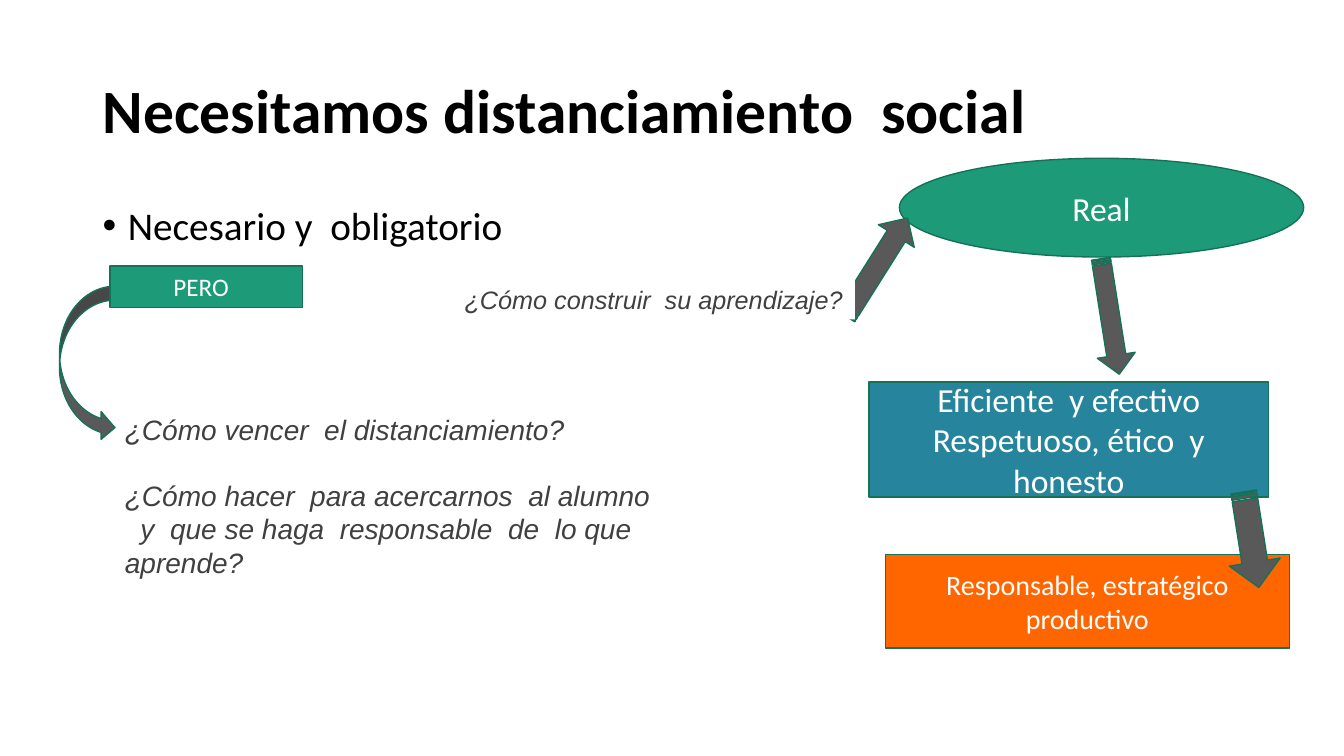
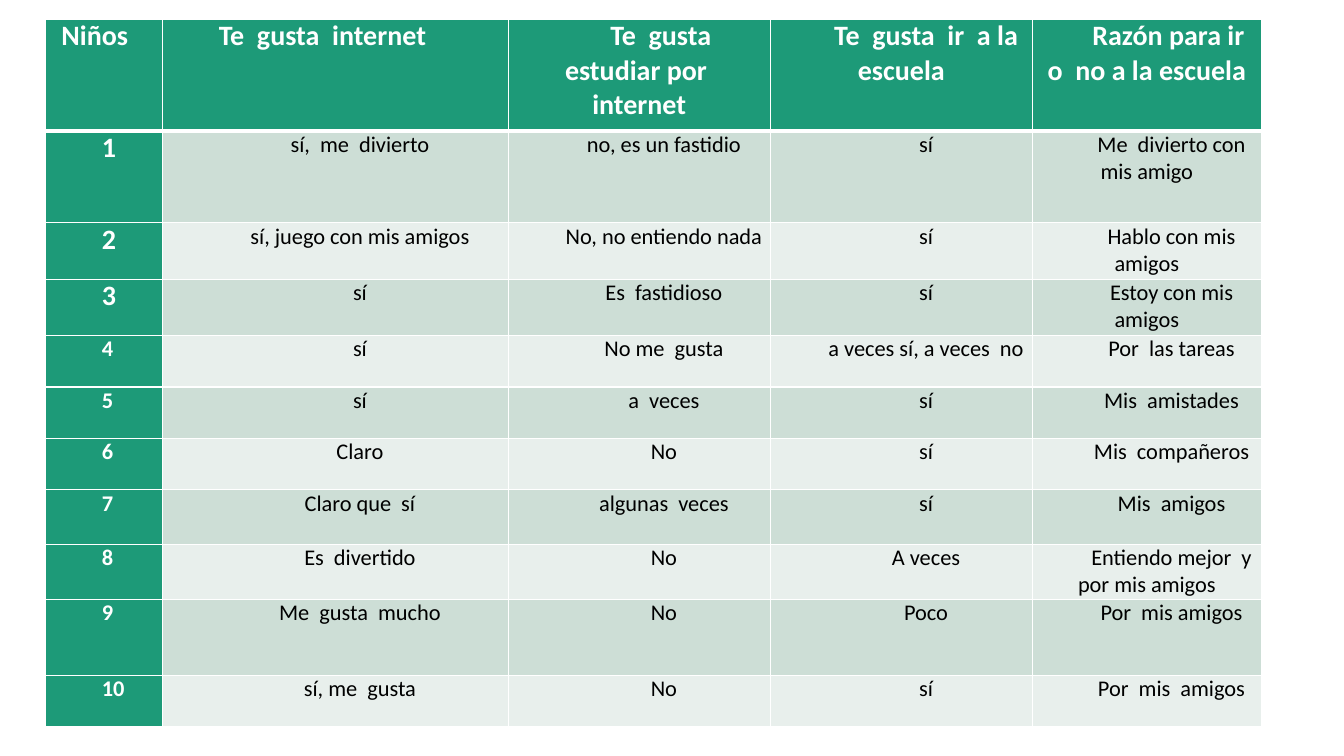
from lxml.etree import SubElement
from pptx import Presentation
from pptx.dml.color import RGBColor
from pptx.enum.shapes import MSO_SHAPE
from pptx.enum.text import MSO_ANCHOR, PP_ALIGN
from pptx.oxml import parse_xml
from pptx.oxml.ns import nsdecls, qn
from pptx.util import Emu, Pt

PX = 9144  # 100 px to the inch
COLOURS = {
    "black": "000000", "white": "FFFFFF", "grey": "404040", "arrow": "595959",
    "green": "1D9A78", "edge": "157259", "blue": "26859D", "orange": "FF6600",
    "band": "CDDED6", "pale": "E8EFEC",
}

# Slide 1: content
TITLE = "Necesitamos distanciamiento  social"
BULLET = "Necesario y  obligatorio"
GOALS = [  # shape, place, fill, text size, lines
    (MSO_SHAPE.OVAL, (892, 157, 401, 98), "green", 24, ["Real"]),
    (MSO_SHAPE.RECTANGLE, (862, 379, 396, 114), "blue", 24,
     ["Eficiente  y efectivo", "Respetuoso, ético  y honesto"]),
    (MSO_SHAPE.RECTANGLE, (878, 550, 401, 93), "orange", 20,
     ["Responsable, estratégico", "productivo"]),
]
ARROWS = [  # shape, place, rotation
    (MSO_SHAPE.CURVED_RIGHT_ARROW, (59, 284, 55, 154), 0),
    (MSO_SHAPE.STRIPED_RIGHT_ARROW, (1043, 295, 116, 38), 81),
    (MSO_SHAPE.STRIPED_RIGHT_ARROW, (812, 244, 115, 42), 302.2),
    (MSO_SHAPE.STRIPED_RIGHT_ARROW, (1193, 510, 96, 51), 81),
]
QUESTIONS = [
    "¿Cómo vencer  el distanciamiento?",
    "¿Cómo hacer  para acercarnos  al alumno   y  que se haga  responsable"
    "  de  lo que  aprende?",
]
LEARNING = "¿Cómo construir  su aprendizaje?"
BUT = "PERO"

# Slide 2: content
HEADERS = ["Niños", "Te  gusta  internet", "Te  gusta  estudiar por  internet",
           "Te  gusta  ir  a la escuela", "Razón para ir  o  no a la escuela"]
ANSWERS = [
    ("sí,  me  divierto", "no, es un fastidio", "sí", "Me  divierto con mis amigo"),
    ("sí, juego con mis amigos", "No, no entiendo nada", "sí", "Hablo con mis amigos"),
    ("sí", "Es  fastidioso", "sí", "Estoy con mis amigos"),
    ("sí", "No me  gusta", "a veces sí, a veces  no", "Por  las tareas"),
    ("sí", "a  veces", "sí", "Mis  amistades"),
    ("Claro", "No", "sí", "Mis  compañeros"),
    ("Claro que  sí", "algunas  veces", "sí", "Mis  amigos"),
    ("Es  divertido", "No", "A veces", "Entiendo mejor  y por mis amigos"),
    ("Me  gusta  mucho", "No", "Poco", "Por  mis amigos"),
    ("sí, me  gusta", "No", "sí", "Por  mis  amigos"),
]
COLUMN_WIDTHS = [116, 343, 260, 260, 227]
ROW_HEIGHTS = [111, 91, 56, 56, 51, 51, 51, 54, 55, 75, 51]


def px(*lengths):
    return [Emu(round(length * PX)) for length in lengths]


def colour(name):
    return RGBColor.from_string(COLOURS[name])


def write(frame, lines, size=18, ink="white", font="Calibri", bold=False,
          italic=False, align=PP_ALIGN.LEFT, anchor=MSO_ANCHOR.TOP, indent=0,
          hanging=0, bullet=None, spacing=None, before=0, gap=0):
    """Fill a text frame; indents are in px, gaps in points."""
    frame.word_wrap = True
    frame.vertical_anchor = anchor
    for number, line in enumerate(lines):
        para = frame.add_paragraph() if number else frame.paragraphs[0]
        para.alignment = align
        para.space_before = Pt(gap if number else before)
        if spacing:
            para.line_spacing = spacing
        properties = para._p.get_or_add_pPr()
        properties.set("marL", str(hanging * PX))
        properties.set("indent", str((indent - hanging) * PX))
        if bullet:
            SubElement(properties, qn("a:buFont"), typeface="Arial")
            SubElement(properties, qn("a:buChar"), char=bullet)
        span = para.add_run()
        span.text = line
        span.font.size = Pt(size)
        span.font.name = font
        span.font.bold = bold
        span.font.italic = italic
        span.font.color.rgb = colour(ink)


def add_box(page, kind, place, fill, edge="edge", lines=(), **style):
    box = page.shapes.add_shape(kind, *px(*place))
    box.shadow.inherit = False
    box.fill.solid()
    box.fill.fore_color.rgb = colour(fill)
    if edge:
        box.line.color.rgb = colour(edge)
        box.line.width = Pt(1)
    else:
        box.line.fill.background()
    write(box.text_frame, lines, **style)
    return box


def add_text(page, place, lines, **style):
    box = page.shapes.add_textbox(*px(*place))
    write(box.text_frame, lines, **style)


def set_borders(cell, **points):
    properties = cell._tc.get_or_add_tcPr()
    for position, side in enumerate("LRTB"):
        width = Pt(points.get(side, 1))
        properties.insert(position, parse_xml(
            f'<a:ln{side} {nsdecls("a")} w="{width}"><a:solidFill>'
            f'<a:srgbClr val="{COLOURS["white"]}"/></a:solidFill></a:ln{side}>'))


def build_distance(page):
    add_text(page, (92, 40, 1150, 145), [TITLE], size=44, ink="black", bold=True,
             anchor=MSO_ANCHOR.MIDDLE, spacing=0.9)
    add_text(page, (92, 200, 1150, 476), [BULLET], size=28, ink="black",
             hanging=25, bullet="•", spacing=0.9, before=10)
    centred = dict(align=PP_ALIGN.CENTER, anchor=MSO_ANCHOR.MIDDLE)
    question = dict(fill="white", edge=None, ink="grey", font="Arial", italic=True)

    # Goals on the right, then the questions and arrows over them
    for kind, place, fill, size, lines in GOALS:
        add_box(page, kind, place, fill, lines=lines, size=size, **centred)
    add_box(page, MSO_SHAPE.RECTANGLE, (114, 404, 542, 178), lines=QUESTIONS,
            size=20, gap=23, **question)
    for kind, place, rotation in ARROWS:
        add_box(page, kind, place, "arrow").rotation = rotation
    add_box(page, MSO_SHAPE.RECTANGLE, (451, 277, 397, 40), lines=[LEARNING],
            size=18, **question)
    but = add_box(page, MSO_SHAPE.RECTANGLE, (109, 264, 191, 41), "green",
                  lines=[BUT], **centred)
    but.text_frame.margin_right = px(20)[0]


def build_survey(page):
    rows = [HEADERS] + [(str(child), *answers)
                        for child, answers in enumerate(ANSWERS, 1)]
    table = page.shapes.add_table(
        len(rows), len(HEADERS),
        *px(45, 19, sum(COLUMN_WIDTHS), sum(ROW_HEIGHTS))).table
    table.first_row = table.horz_banding = False
    for column, width in zip(table.columns, COLUMN_WIDTHS):
        column.width = px(width)[0]
    for row, height in zip(table.rows, ROW_HEIGHTS):
        row.height = px(height)[0]

    for r, texts in enumerate(rows):
        for c, text in enumerate(texts):
            cell = table.cell(r, c)
            heading = r == 0 or c == 0
            cell.margin_left = cell.margin_right = px(7)[0]
            cell.margin_top = cell.margin_bottom = 0
            cell.fill.solid()
            cell.fill.fore_color.rgb = colour(
                "green" if heading else "band" if r % 2 else "pale")
            set_borders(cell, B=3 if r == 0 else 1, T=3 if r == 1 else 1)
            justified = c == 0 or (r == 0 and c == 1)
            write(cell.text_frame, [text],
                  size=20 if heading and r <= 3 else 16,
                  ink="white" if heading else "black", bold=heading,
                  align=PP_ALIGN.JUSTIFY if justified else PP_ALIGN.CENTER,
                  indent=9 if r == c == 0 else 49)


def main():
    deck = Presentation()
    deck.slide_width, deck.slide_height = px(1333, 750)
    for build in (build_distance, build_survey):
        build(deck.slides.add_slide(deck.slide_layouts[6]))
    deck.save("out.pptx")


if __name__ == "__main__":
    main()
